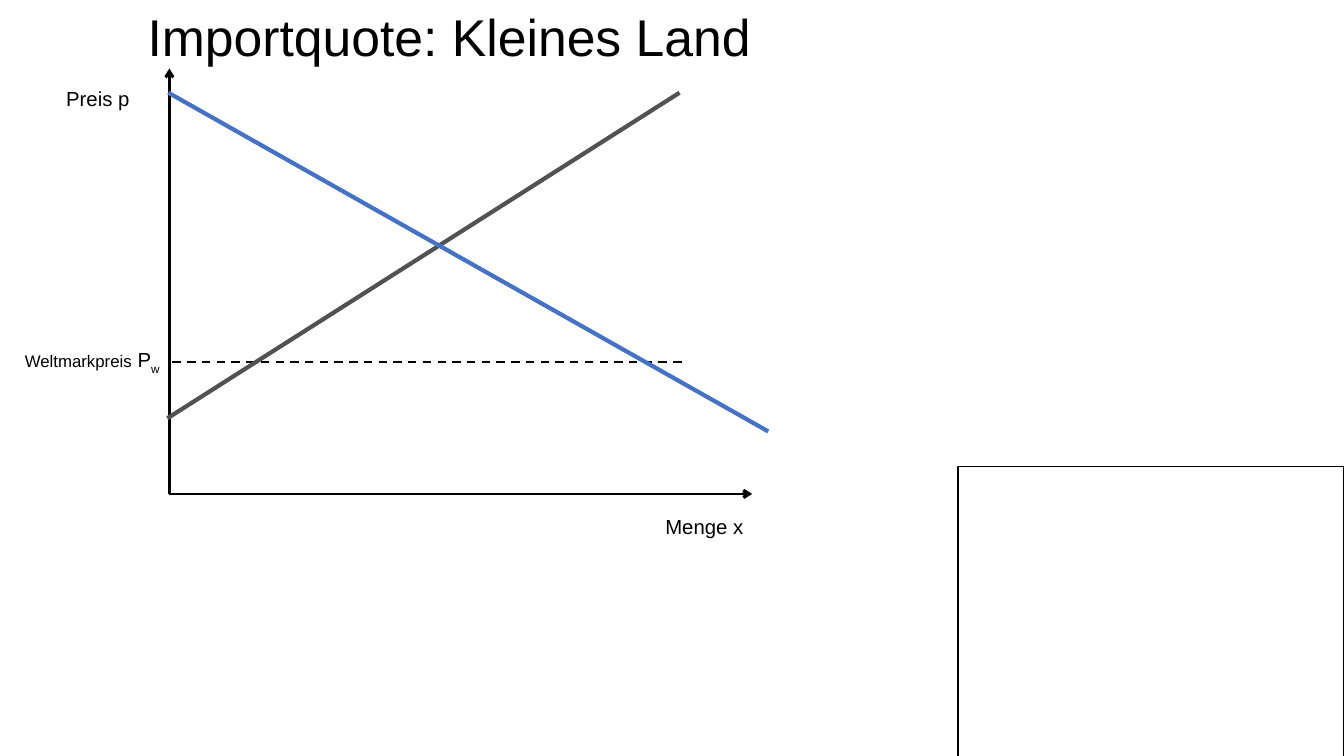
from dataclasses import dataclass

from lxml import etree
from pptx import Presentation
from pptx.dml.color import RGBColor
from pptx.enum.dml import MSO_LINE
from pptx.enum.shapes import MSO_CONNECTOR, MSO_SHAPE
from pptx.enum.text import PP_ALIGN
from pptx.oxml.ns import qn
from pptx.slide import Slide
from pptx.util import Inches, Pt

BLACK = RGBColor(0x00, 0x00, 0x00)
GREY = RGBColor(0x52, 0x52, 0x52)
BLUE = RGBColor(0x44, 0x72, 0xC4)
STRAIGHT = MSO_CONNECTOR.STRAIGHT
RECT = MSO_SHAPE.RECTANGLE
DASH = MSO_LINE.DASH
LEFT, CENTER = PP_ALIGN.LEFT, PP_ALIGN.CENTER
FONT = "Arial"

Point = tuple[float, float]
Box = tuple[float, float, float, float]


@dataclass(frozen=True)
class Line:
    start: Point
    end: Point
    width: float
    color: RGBColor = BLACK
    dash: bool = False
    arrow: bool = False


@dataclass(frozen=True)
class Piece:
    text: str
    size: float
    sub: bool = False


@dataclass(frozen=True)
class Label:
    box: Box
    pieces: tuple[Piece, ...]
    align: PP_ALIGN = CENTER
    wrap: bool = True


ORIGIN = (1.68, 4.9)
WORLD = 3.59

LINES = (
    Line(ORIGIN, (1.68, 0.68), 2, arrow=True),
    Line(ORIGIN, (7.46, 4.9), 2, arrow=True),
    Line((6.76, WORLD), (1.67, WORLD), 1.5, dash=True),
    Line((1.66, 4.15), (6.74, 0.92), 3, GREY),
    Line((1.67, 0.92), (7.62, 4.28), 3, BLUE),
)

LABELS = (
    Label((0.48, 0.81, 0.98, 0.35), (Piece("Preis p", 14.5),)),
    Label((6.5, 5.05, 0.99, 0.35), (Piece("Menge x", 14.5),), LEFT, False),
    Label(
        (0.05, 3.4, 1.73, 0.33),
        (Piece("Weltmarkpreis", 12), Piece(" P", 14.5), Piece("w", 14.5, True)),
    ),
    Label((0.38, 0, 8.16, 0.7), (Piece("Importquote: Kleines Land", 36.9),)),
)


def draw_line(slide: Slide, line: Line) -> None:
    ends = (Inches(v) for v in line.start + line.end)
    shape = slide.shapes.add_connector(STRAIGHT, *ends)
    shape.line.width = Pt(line.width)
    shape.line.color.rgb = line.color
    if line.dash:
        shape.line.dash_style = DASH
    props = shape.element.spPr
    if line.arrow:
        tail = etree.SubElement(props.find(qn("a:ln")), qn("a:tailEnd"))
        tail.set("type", "arrow")
    etree.SubElement(props, qn("a:effectLst"))


def draw_label(slide: Slide, label: Label) -> None:
    shape = slide.shapes.add_textbox(*(Inches(v) for v in label.box))
    frame = shape.text_frame
    frame.word_wrap = label.wrap
    para = frame.paragraphs[0]
    para.alignment = label.align
    for piece in label.pieces:
        run = para.add_run()
        run.text = piece.text
        run.font.name = FONT
        run.font.size = Pt(piece.size)
        run.font.color.rgb = BLACK
        if piece.sub:
            run.font._element.set("baseline", "-25000")


def draw_frame(slide: Slide, box: Box) -> None:
    """Draw an empty outlined box."""
    shape = slide.shapes.add_shape(RECT, *(Inches(v) for v in box))
    shape.shadow.inherit = False
    shape.fill.background()
    shape.line.color.rgb = BLACK
    shape.line.width = Pt(1)


def main() -> None:
    deck = Presentation()
    deck.slide_width = Inches(13.33)
    deck.slide_height = Inches(7.5)
    slide = deck.slides.add_slide(deck.slide_layouts[6])
    for line in LINES:
        draw_line(slide, line)
    draw_frame(slide, (9.5, 4.63, 3.83, 2.88))
    for label in LABELS:
        draw_label(slide, label)
    deck.save("out.pptx")


if __name__ == "__main__":
    main()
